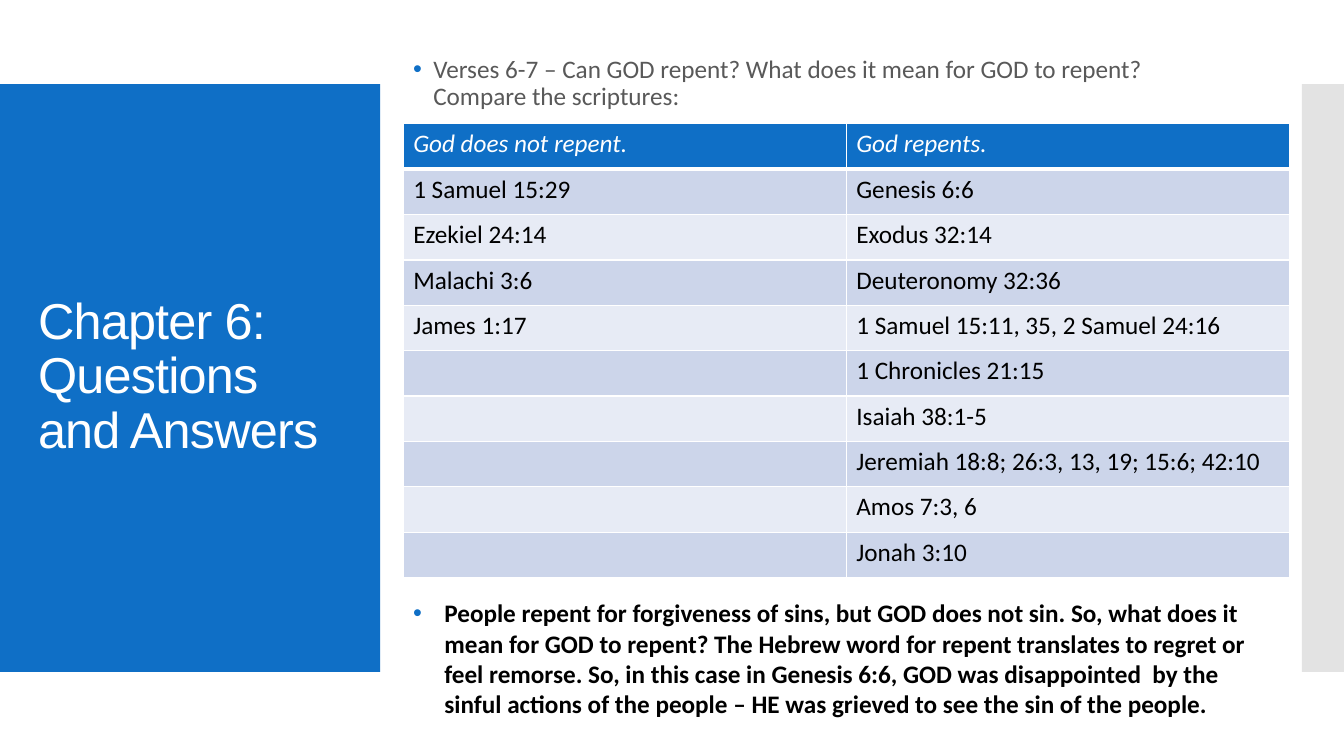
from dataclasses import dataclass

from lxml import etree
from pptx import Presentation
from pptx.dml.color import RGBColor
from pptx.enum.shapes import MSO_SHAPE
from pptx.enum.text import MSO_ANCHOR, PP_ALIGN
from pptx.oxml.ns import qn
from pptx.util import Inches, Pt

RECTANGLE = MSO_SHAPE.RECTANGLE
MIDDLE, TOP = MSO_ANCHOR.MIDDLE, MSO_ANCHOR.TOP
LEFT = PP_ALIGN.LEFT

SLIDE_WIDTH, SLIDE_HEIGHT = Inches(13.33), Inches(7.5)
COLUMNS, ROWS = 32, 18
CONTENT_LEFT, CONTENT_WIDTH = 9.6, 21.1


@dataclass(frozen=True)
class Theme:
    accent: str = "0F6FC6"
    strip: str = "C8C8C8"
    white: str = "FFFFFF"
    black: str = "000000"
    grey: str = "595959"
    bands: tuple = ("CCD5EA", "E7EBF5")
    heading_font: str = "Arial"
    body_font: str = "Calibri"
    title_size: int = 36
    body_size: int = 18
    thin_line: int = 1
    thick_line: int = 3


THEME = Theme()

TITLE = "Chapter 6: Questions and Answers"
QUESTION = ("Verses 6-7 – Can GOD repent? What does it mean for GOD to repent? "
            "Compare the scriptures:")
ANSWER = ("People repent for forgiveness of sins, but GOD does not sin. So, what does it "
          "mean for GOD to repent? The Hebrew word for repent translates to regret or feel "
          "remorse. So, in this case in Genesis 6:6, GOD was disappointed  by the sinful "
          "actions of the people – HE was grieved to see the sin of the people.")
SCRIPTURES = [
    ("God does not repent.", "God repents."),
    ("1 Samuel 15:29", "Genesis 6:6"),
    ("Ezekiel 24:14", "Exodus 32:14"),
    ("Malachi 3:6", "Deuteronomy 32:36"),
    ("James 1:17", "1 Samuel 15:11, 35, 2 Samuel 24:16"),
    ("", "1 Chronicles 21:15"),
    ("", "Isaiah 38:1-5"),
    ("", "Jeremiah 18:8; 26:3, 13, 19; 15:6; 42:10"),
    ("", "Amos 7:3, 6"),
    ("", "Jonah 3:10"),
]


def grid(column, row, width, height):
    """Turn grid columns and rows into slide lengths."""
    across, down = SLIDE_WIDTH / COLUMNS, SLIDE_HEIGHT / ROWS
    return [round(length) for length in
            (column * across, row * down, width * across, height * down)]


def set_attributes(target, values):
    for name, value in values.items():
        setattr(target, name, value)


def paint(fill, color):
    fill.solid()
    fill.fore_color.rgb = RGBColor.from_string(color)


def add_panel(slide, place, color, opacity=None):
    shape = slide.shapes.add_shape(RECTANGLE, *grid(*place))
    shape.shadow.inherit = False
    shape.line.fill.background()
    paint(shape.fill, color)
    if opacity is not None:
        color_element = shape.fill._xPr.find(qn("a:solidFill"))[0]
        etree.SubElement(color_element, qn("a:alpha"), val=str(opacity * 1000))


def write(paragraph, text, color, font=THEME.body_font, size=THEME.body_size, **styles):
    run = paragraph.add_run()
    run.text = text
    set_attributes(run.font, {"name": font, "size": Pt(size), **styles})
    run.font.color.rgb = RGBColor.from_string(color)
    return run


def add_bullet(paragraph, indent):
    properties = paragraph._p.get_or_add_pPr()
    properties.set("marL", str(Inches(indent)))
    properties.set("indent", str(-Inches(indent)))
    bullet_color = etree.SubElement(properties, qn("a:buClr"))
    etree.SubElement(bullet_color, qn("a:srgbClr"), val=THEME.accent)
    etree.SubElement(properties, qn("a:buFont"), typeface=THEME.heading_font)
    etree.SubElement(properties, qn("a:buChar"), char="•")


def add_text(slide, place, text, color, anchor=TOP, spacing=1.0, indent=None, **styles):
    frame = slide.shapes.add_textbox(*grid(*place)).text_frame
    set_attributes(frame, {"word_wrap": True, "vertical_anchor": anchor})
    paragraph = frame.paragraphs[0]
    if indent:
        add_bullet(paragraph, indent)
    set_attributes(paragraph, {"alignment": LEFT, "line_spacing": spacing})
    return write(paragraph, text, color, **styles)


def add_borders(cell, widths):
    properties = cell._tc.get_or_add_tcPr()
    for position, (side, width) in enumerate(widths.items()):
        line = etree.Element(qn(f"a:{side}"), w=str(Pt(width)))
        line_fill = etree.SubElement(line, qn("a:solidFill"))
        etree.SubElement(line_fill, qn("a:srgbClr"), val=THEME.white)
        properties.insert(position, line)


def add_scripture_table(slide, place, rows):
    left, top, width, height = grid(*place)
    table = slide.shapes.add_table(
        len(rows), len(rows[0]), left, top, width, height).table
    for row_index, row in enumerate(rows):
        header = row_index == 0
        fill = THEME.accent if header else THEME.bands[(row_index - 1) % 2]
        color = THEME.white if header else THEME.black
        borders = dict.fromkeys(("lnL", "lnR", "lnT", "lnB"), THEME.thin_line)
        if header:
            borders["lnB"] = THEME.thick_line
        for column_index, text in enumerate(row):
            cell = table.cell(row_index, column_index)
            paint(cell.fill, fill)
            add_borders(cell, borders)
            if text:
                write(cell.text_frame.paragraphs[0], text, color,
                      italic=header, bold=False)


def main():
    presentation = Presentation()
    set_attributes(presentation,
                   {"slide_width": SLIDE_WIDTH, "slide_height": SLIDE_HEIGHT})
    slide = presentation.slides.add_slide(presentation.slide_layouts[6])

    # Side panels
    add_panel(slide, (0, 2, 9.05, 14), THEME.accent)
    add_panel(slide, (31, 2, 1, 14), THEME.strip, opacity=50)

    # Title
    title = add_text(slide, (0.67, 2.95, 7.73, 12.07), TITLE, THEME.white,
                     anchor=MIDDLE, spacing=0.9,
                     font=THEME.heading_font, size=THEME.title_size)
    title.font._element.set("spc", "-60")

    # Question, scriptures and answer
    add_text(slide, (CONTENT_LEFT, 1.03, 19.2, 1.92), QUESTION, THEME.grey,
             anchor=MIDDLE, spacing=0.9, indent=0.2)
    add_scripture_table(slide, (CONTENT_LEFT, 2.95, CONTENT_WIDTH, 10.8), SCRIPTURES)
    add_text(slide, (CONTENT_LEFT, 14.11, CONTENT_WIDTH, 3.14), ANSWER, THEME.black,
             indent=0.31, bold=True)

    presentation.save("out.pptx")


if __name__ == "__main__":
    main()
